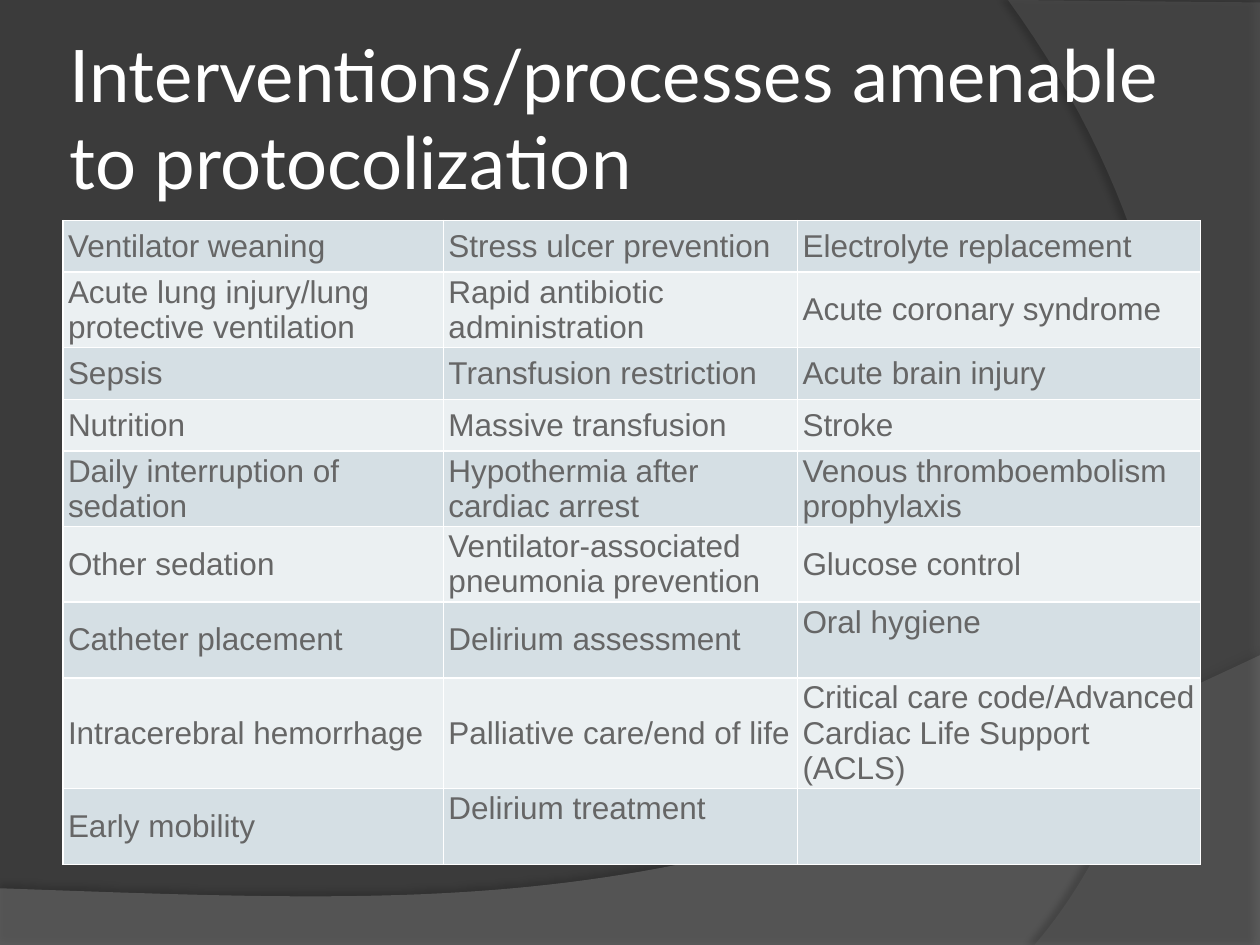
from lxml import etree
from pptx import Presentation
from pptx import oxml
from pptx import util as u
from pptx.dml.color import RGBColor
from pptx.enum import text
from pptx.oxml.ns import nsdecls

THEME = {
    "background": RGBColor.from_string("3B3B3B"),
    "title": {"name": "Lato", "size": u.Pt(41.4), "color": RGBColor.from_string("FFFFFF")},
    "cell": {"name": "Arial", "size": u.Pt(18), "color": RGBColor.from_string("666666")},
    "bands": [RGBColor.from_string("D5DFE4"), RGBColor.from_string("EBF0F2")],
    "border": "FFFFFF",
    "wave": RGBColor.from_string("7F7F7F"),
    "arc": RGBColor.from_string("5E5E5E"),
    "shadow": "000000",
}


def apply_font(font, style):
    for key, value in style.items():
        if key == "color":
            font.color.rgb = value
        else:
            setattr(font, key, value)


def bezier(start, control_1, control_2, end, steps=60):
    points = []
    for step in range(steps + 1):
        t = step / steps
        weights = ((1 - t) ** 3, 3 * t * (1 - t) ** 2, 3 * t**2 * (1 - t), t**3)
        corners = (start, control_1, control_2, end)
        points.append(tuple(sum(w * c[axis] for w, c in zip(weights, corners)) for axis in (0, 1)))
    return points


prs = Presentation()
prs.slide_width, prs.slide_height = u.Inches(10), u.Inches(7.5)
slide = prs.slides.add_slide(prs.slide_layouts[5])
slide.background.fill.solid()
slide.background.fill.fore_color.rgb = THEME["background"]

wave = [(0, 7.51), (10, 7.51)] + bezier((10, 5.2), (5.59, 7.29), (3.91, 7.19), (0, 7.05))
arc = [(10, 0.02), (10, 7.5)] + bezier((8.21, 7.5), (9.35, 6.19), (10.18, 3), (8, 0))
swooshes = [
    (wave, THEME["wave"], 45, 35, 3.5, 270),
    (arc, THEME["arc"], 40, 45, 4, 180),
]
for outline, color, opacity, shadow_opacity, distance, direction in swooshes:
    points = [(u.Inches(x), u.Inches(y)) for x, y in outline]
    builder = slide.shapes.build_freeform(*points[0])
    builder.add_line_segments(points[1:], close=True)
    swoosh = builder.convert_to_shape()
    swoosh.line.fill.background()
    swoosh.fill.solid()
    swoosh.fill.fore_color.rgb = color
    fill_color = swoosh.fill._xPr.find(".//" + oxml.ns.qn("a:srgbClr"))
    etree.SubElement(fill_color, oxml.ns.qn("a:alpha"), val=str(opacity * 1000))
    swoosh._element.spPr.append(oxml.parse_xml(
        f'<a:effectLst {nsdecls("a")}><a:outerShdw blurRad="{u.Pt(4)}" dist="{u.Pt(distance)}" '
        f'dir="{direction * 60000}" algn="ctr" rotWithShape="0"><a:srgbClr val="{THEME["shadow"]}">'
        f'<a:alpha val="{shadow_opacity * 1000}"/></a:srgbClr></a:outerShdw></a:effectLst>'))

title = slide.shapes.title
slide.shapes._spTree.append(title._element)
title_box = {"left": 0.5, "top": 0.3, "width": 9.03, "height": 1.25}
for key, value in title_box.items():
    setattr(title, key, u.Inches(value))
title_frame = {
    "text": "Interventions/processes amenable to protocolization",
    "word_wrap": True,
    "auto_size": text.MSO_AUTO_SIZE.NONE,
    "vertical_anchor": text.MSO_ANCHOR.MIDDLE,
}
for side in ("left", "right", "top", "bottom"):
    title_frame[f"margin_{side}"] = u.Inches(0.05)
for key, value in title_frame.items():
    setattr(title.text_frame, key, value)
heading = title.text_frame.paragraphs[0]
heading.alignment = text.PP_ALIGN.LEFT
apply_font(heading.runs[0].font, THEME["title"])

interventions = [
    ("Ventilator weaning", "Stress ulcer prevention", "Electrolyte replacement"),
    ("Acute lung injury/lung protective ventilation", "Rapid antibiotic administration",
     "Acute coronary syndrome"),
    ("Sepsis", "Transfusion restriction", "Acute brain injury"),
    ("Nutrition", "Massive transfusion", "Stroke"),
    ("Daily interruption of sedation", "Hypothermia after cardiac arrest",
     "Venous thromboembolism prophylaxis"),
    ("Other sedation", "Ventilator-associated pneumonia prevention", "Glucose control"),
    ("Catheter placement", "Delirium assessment", "Oral hygiene"),
    ("Intracerebral hemorrhage", "Palliative care/end of life",
     "Critical care code/Advanced Cardiac Life Support (ACLS)"),
    ("Early mobility", "Delirium treatment", ""),
]
top_aligned = {"Oral hygiene", "Delirium treatment"}
column_widths = [3.02, 2.81, 3.2]
row_heights = [0.41, 0.6, 0.41, 0.41, 0.6, 0.6, 0.6, 0.88, 0.6]

grid = slide.shapes.add_table(
    len(interventions), len(column_widths), u.Inches(0.5), u.Inches(1.75),
    u.Inches(sum(column_widths)), u.Inches(sum(row_heights))).table
grid.first_row = grid.horz_banding = False
for column, width in zip(grid.columns, column_widths):
    column.width = u.Inches(width)
for row, height in zip(grid.rows, row_heights):
    row.height = u.Inches(height)

for row_index, entries in enumerate(interventions):
    for column_index, entry in enumerate(entries):
        cell = grid.cell(row_index, column_index)
        anchor = text.MSO_ANCHOR.TOP if entry in top_aligned else text.MSO_ANCHOR.MIDDLE
        cell_format = {
            "text": entry,
            "vertical_anchor": anchor,
            "margin_left": u.Inches(0.04),
            "margin_right": u.Inches(0.04),
            "margin_top": u.Inches(0.02),
            "margin_bottom": u.Inches(0.02),
        }
        for key, value in cell_format.items():
            setattr(cell, key, value)
        for edge in ("lnL", "lnR", "lnT", "lnB"):
            cell._tc.get_or_add_tcPr().append(oxml.parse_xml(
                f'<a:{edge} {nsdecls("a")} w="{u.Pt(1)}"><a:solidFill>'
                f'<a:srgbClr val="{THEME["border"]}"/></a:solidFill></a:{edge}>'))
        cell.fill.solid()
        cell.fill.fore_color.rgb = THEME["bands"][row_index % 2]
        for run in cell.text_frame.paragraphs[0].runs:
            apply_font(run.font, THEME["cell"])

prs.save("out.pptx")
